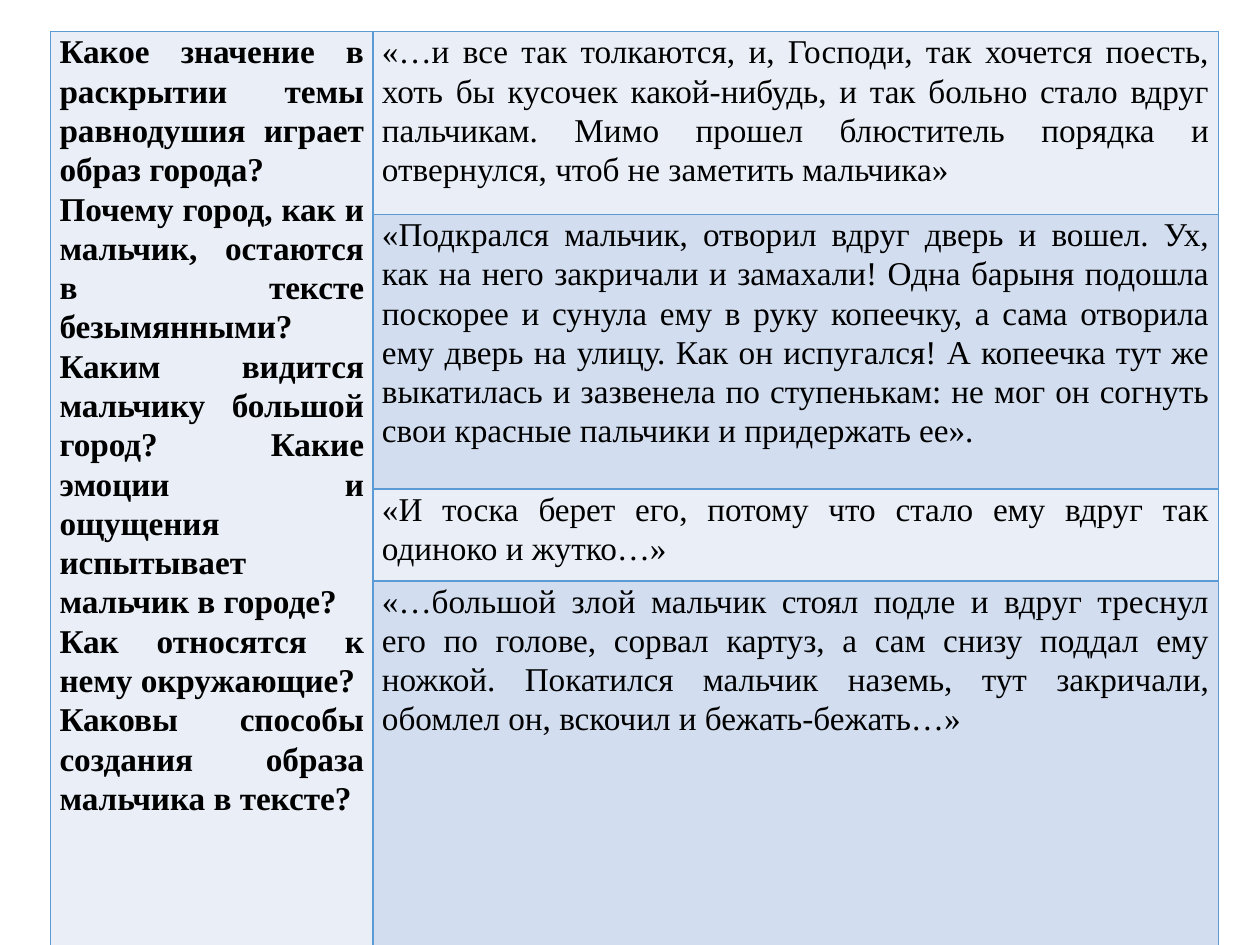
from lxml import etree
from pptx import Presentation
from pptx import util as u
from pptx.dml.color import RGBColor
from pptx.enum import text
from pptx.oxml import ns

QUESTIONS = [
    "Какое значение в раскрытии темы равнодушия играет образ города?",
    "Почему город, как и мальчик, остаются в тексте безымянными?",
    "Каким видится мальчику большой город? Какие эмоции и ощущения испытывает мальчик в городе?",
    "Как относятся к нему окружающие?",
    "Каковы способы создания образа мальчика в тексте?",
]
QUOTES = [
    "«…и все так толкаются, и, Господи, так хочется поесть, хоть бы кусочек какой-нибудь, "
    "и так больно стало вдруг пальчикам. Мимо прошел блюститель порядка и отвернулся, "
    "чтоб не заметить мальчика»",
    "«Подкрался мальчик, отворил вдруг дверь и вошел. Ух, как на него закричали и замахали! "
    "Одна барыня подошла поскорее и сунула ему в руку копеечку, а сама отворила ему дверь "
    "на улицу. Как он испугался! А копеечка тут же выкатилась и зазвенела по ступенькам: "
    "не мог он согнуть свои красные пальчики и придержать ее».",
    "«И тоска берет его, потому что стало ему вдруг так одиноко и жутко…»",
    "«…большой злой мальчик стоял подле и вдруг треснул его по голове, сорвал картуз, "
    "а сам снизу поддал ему ножкой. Покатился мальчик наземь, тут закричали, обомлел он, "
    "вскочил и бежать-бежать…»",
]
COLUMN_WIDTHS = [6.5, 17.04]
ROW_HEIGHTS = [3.68, 5.54, 1.85, 6.76]


def colour(value):
    return RGBColor.from_string(value)


def write(frame, lines, size=19, bold=False, font="Times New Roman", fill="000000"):
    """Put each line in its own justified paragraph."""
    for index, line in enumerate(lines):
        para = frame.add_paragraph() if index else frame.paragraphs[0]
        para.alignment = text.PP_ALIGN.JUSTIFY
        para.line_spacing = 1.07
        span = para.add_run()
        span.text = line
        span.font.name = font
        span.font.size = u.Pt(size)
        span.font.bold = bold
        span.font.color.rgb = colour(fill)


class Builder:
    """Holds the table style and the current page."""

    border = "5B9BD5"
    bands = ["EAEFF7", "D2DEEF"]

    def __init__(self, page):
        self.page = page

    def table(self, left, top, widths, heights):
        table = self.page.shapes.add_table(
            len(heights), len(widths), u.Cm(left), u.Cm(top),
            u.Cm(sum(widths)), u.Cm(sum(heights))).table
        table.first_row = False
        table.horz_banding = False
        for column, width in zip(table.columns, widths):
            column.width = u.Cm(width)
        for index, (row, height) in enumerate(zip(table.rows, heights)):
            row.height = u.Cm(height)
            for cell in row.cells:
                self.cell(cell, self.bands[index % 2])
        return table

    def cell(self, cell, fill):
        """Set the margins, borders and fill of a cell."""
        cell.margin_left = cell.margin_right = u.Cm(0.18)
        cell.margin_top = cell.margin_bottom = 0
        properties = cell._tc.get_or_add_tcPr()
        for side in ("lnL", "lnR", "lnT", "lnB"):
            line = etree.SubElement(properties, ns.qn("a:" + side), w=str(u.Pt(1)))
            solid = etree.SubElement(line, ns.qn("a:solidFill"))
            etree.SubElement(solid, ns.qn("a:srgbClr"), val=self.border)
        cell.fill.solid()
        cell.fill.fore_color.rgb = colour(fill)


def main():
    deck = Presentation()
    deck.slide_width, deck.slide_height = u.Cm(25.4), u.Cm(19.05)
    builder = Builder(deck.slides.add_slide(deck.slide_layouts[6]))

    table = builder.table(1.02, 0.64, COLUMN_WIDTHS, ROW_HEIGHTS)
    questions = table.cell(0, 0)
    questions.merge(table.cell(len(QUOTES) - 1, 0))
    write(questions.text_frame, QUESTIONS, bold=True)
    for index, quote in enumerate(QUOTES):
        write(table.cell(index, 1).text_frame, [quote])

    deck.save("out.pptx")


if __name__ == "__main__":
    main()
